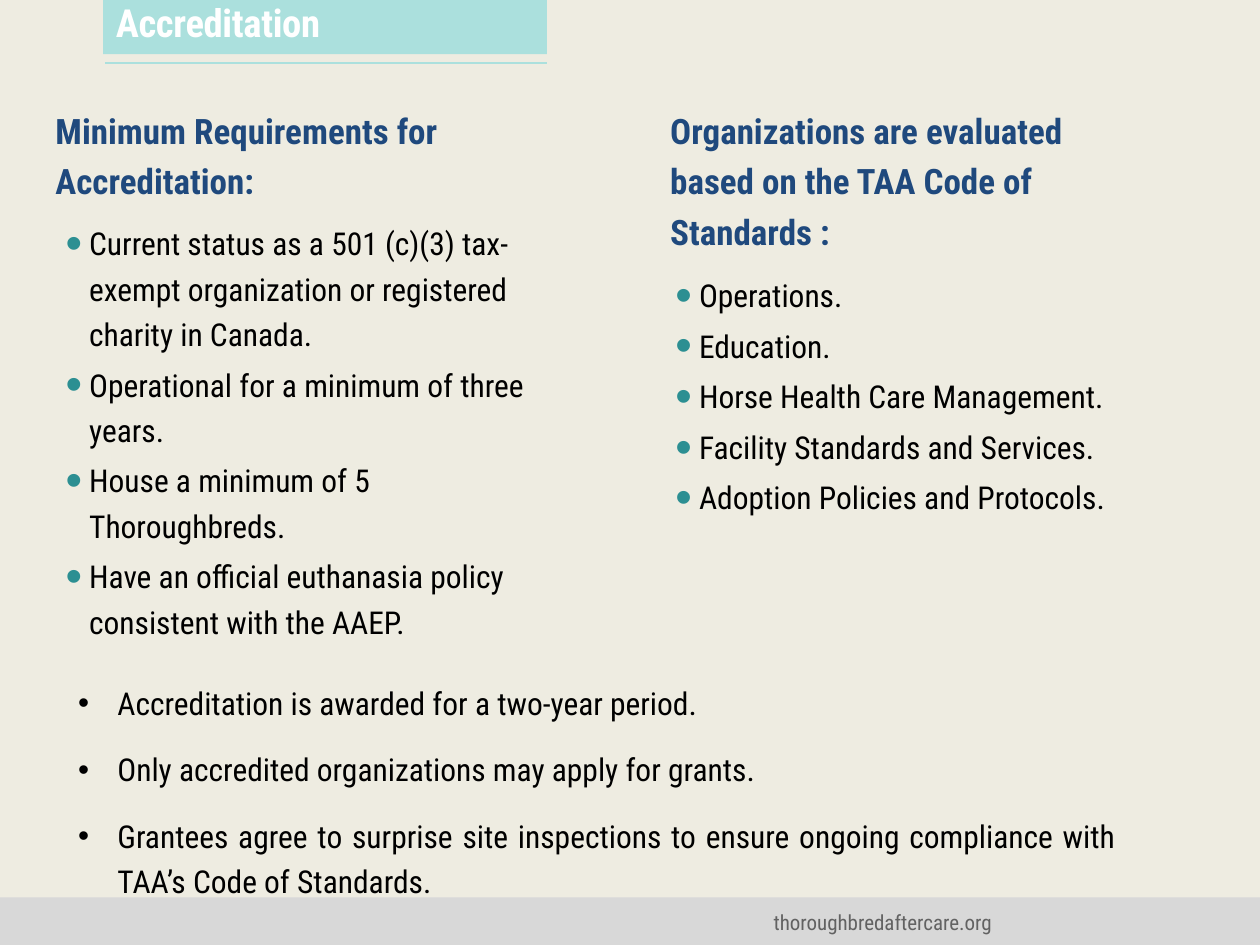
import pptx
from dataclasses import dataclass
from lxml import etree
from pptx.dml.color import RGBColor
from pptx.enum.shapes import MSO_CONNECTOR, MSO_SHAPE
from pptx.enum.text import MSO_ANCHOR, MSO_AUTO_SIZE, PP_ALIGN
from pptx.oxml.ns import qn
from pptx.util import Pt


@dataclass(frozen=True)
class Theme:
    font: str = "Roboto Condensed"
    background: str = "EEECE1"
    banner: str = "ABE0DD"
    banner_text: str = "FFFFFF"
    heading: str = "1F497D"
    body: str = "000000"
    bullet: str = "2C8F92"
    footer_bar: str = "D8D8D8"
    footer_text: str = "626262"
    title_size: float = 22.1
    heading_size: float = 20
    body_size: float = 18
    footer_size: float = 12


THEME = Theme()
COLUMN_WIDTH = 288
HEADING_TOP = 54

REQUIREMENTS = [
    "Current status as a 501 (c)(3) tax-exempt organization or registered charity in Canada.",
    "Operational for a minimum of three years.",
    "House a minimum of 5 Thoroughbreds.",
    "Have an official euthanasia policy consistent with the AAEP.",
]
STANDARDS = [
    "Operations.",
    "Education.",
    "Horse Health Care Management.",
    "Facility Standards and Services.",
    "Adoption Policies and Protocols.",
]
TERMS = [
    "Accreditation is awarded for a two-year period.",
    "Only accredited organizations may apply for grants.",
    "Grantees agree to surprise site inspections to ensure ongoing compliance with "
    "TAA’s Code of Standards.",
]


def place(sp, left, top, width, height):
    sp.left, sp.top, sp.width, sp.height = map(Pt, (left, top, width, height))


def fill_solid(sp, color):
    sp.fill.solid()
    sp.fill.fore_color.rgb = RGBColor.from_string(color)


def prepare_frame(sp, anchor=MSO_ANCHOR.TOP):
    tf = sp.text_frame
    tf.word_wrap = True
    tf.auto_size = MSO_AUTO_SIZE.NONE
    tf.vertical_anchor = anchor
    return tf


def add_run(p, text, size, color, bold=False):
    r = p.add_run()
    r.text = text
    r.font.name = THEME.font
    r.font.size = Pt(size)
    r.font.bold = bold
    r.font.color.rgb = RGBColor.from_string(color)
    return r


def set_bullet(p, indent, color=None, percent=100):
    pPr = p._p.get_or_add_pPr()
    pPr.set("marL", str(Pt(indent)))
    pPr.set("indent", str(-Pt(indent)))
    if color:
        buClr = etree.SubElement(pPr, qn("a:buClr"))
        etree.SubElement(buClr, qn("a:srgbClr"), val=color)
    etree.SubElement(pPr, qn("a:buSzPct"), val=str(percent * 1000))
    etree.SubElement(pPr, qn("a:buFont"), typeface="Arial")
    etree.SubElement(pPr, qn("a:buChar"), char="•")


def fill_title(sp, text):
    place(sp, 59, 0, 253.5, 31)
    fill_solid(sp, THEME.banner)
    tf = prepare_frame(sp, MSO_ANCHOR.BOTTOM)
    tf.margin_top = tf.margin_bottom = Pt(5.76)
    p = tf.paragraphs[0]
    p.alignment = PP_ALIGN.LEFT
    p.line_spacing = 0.69
    p.space_before = Pt(0)
    r = add_run(p, text, THEME.title_size, THEME.banner_text, bold=True)
    r.font._element.set("spc", "-20")


def fill_heading(sp, left, text):
    place(sp, left, HEADING_TOP, COLUMN_WIDTH, 16.5)
    p = prepare_frame(sp).paragraphs[0]
    p.line_spacing = 1.2
    p.space_before = Pt(0)
    add_run(p, text, THEME.heading_size, THEME.heading, bold=True)


def fill_list(sp, items, indent, gap, align=PP_ALIGN.LEFT, color=None, percent=100):
    tf = prepare_frame(sp)
    for i, item in enumerate(items):
        p = tf.add_paragraph() if i else tf.paragraphs[0]
        set_bullet(p, indent, color, percent)
        p.alignment = align
        p.line_spacing = 1.2
        p.space_before = Pt(gap if i else 0)
        add_run(p, item, THEME.body_size, THEME.body)


def fill_column_list(sp, left, top, items):
    place(sp, left, top, COLUMN_WIDTH, 135.5)
    fill_list(sp, items, indent=13.5, gap=3, color=THEME.bullet, percent=150)


def add_rule(s, left, right, y):
    line = s.shapes.add_connector(MSO_CONNECTOR.STRAIGHT, Pt(right), Pt(y), Pt(left), Pt(y))
    line.line.color.rgb = RGBColor.from_string(THEME.banner)
    line.line.width = Pt(0.75)
    etree.SubElement(line._element.spPr, qn("a:effectLst"))


def add_terms(s):
    sp = s.shapes.add_textbox(Pt(37.5), Pt(383), Pt(607.5), Pt(78.5))
    fill_list(sp, TERMS, indent=22.5, gap=12, align=PP_ALIGN.JUSTIFY)


def add_footer(s, text):
    bar = s.shapes.add_shape(MSO_SHAPE.RECTANGLE, Pt(0), Pt(512.75), Pt(720), Pt(27.25))
    bar.shadow.inherit = False
    fill_solid(bar, THEME.footer_bar)
    bar.line.fill.background()
    sp = s.shapes.add_textbox(Pt(435), Pt(517.75), Pt(285), Pt(18.75))
    tf = prepare_frame(sp, MSO_ANCHOR.MIDDLE)
    add_run(tf.paragraphs[0], text, THEME.footer_size, THEME.footer_text)


def main():
    prs = pptx.Presentation()
    prs.slide_width, prs.slide_height = Pt(720), Pt(540)
    # Comparison layout: title, two headings and two lists
    s = prs.slides.add_slide(prs.slide_layouts[4])
    fill_solid(s.background, THEME.background)
    _, left_heading, left_list, right_heading, right_list = s.placeholders

    # Title banner
    fill_title(s.shapes.title, "Accreditation")
    add_rule(s, 59.75, 312.5, 36)

    # Two columns
    fill_heading(left_heading, 24.5, "Minimum Requirements for Accreditation:")
    fill_column_list(left_list, 30.25, 120.25, REQUIREMENTS)
    fill_heading(right_heading, 375.75,
                 "Organizations are evaluated based on the TAA Code of Standards :")
    fill_column_list(right_list, 378.75, 149.75, STANDARDS)

    # Terms and footer
    add_terms(s)
    add_footer(s, "thoroughbredaftercare.org")
    prs.save("out.pptx")


if __name__ == "__main__":
    main()
